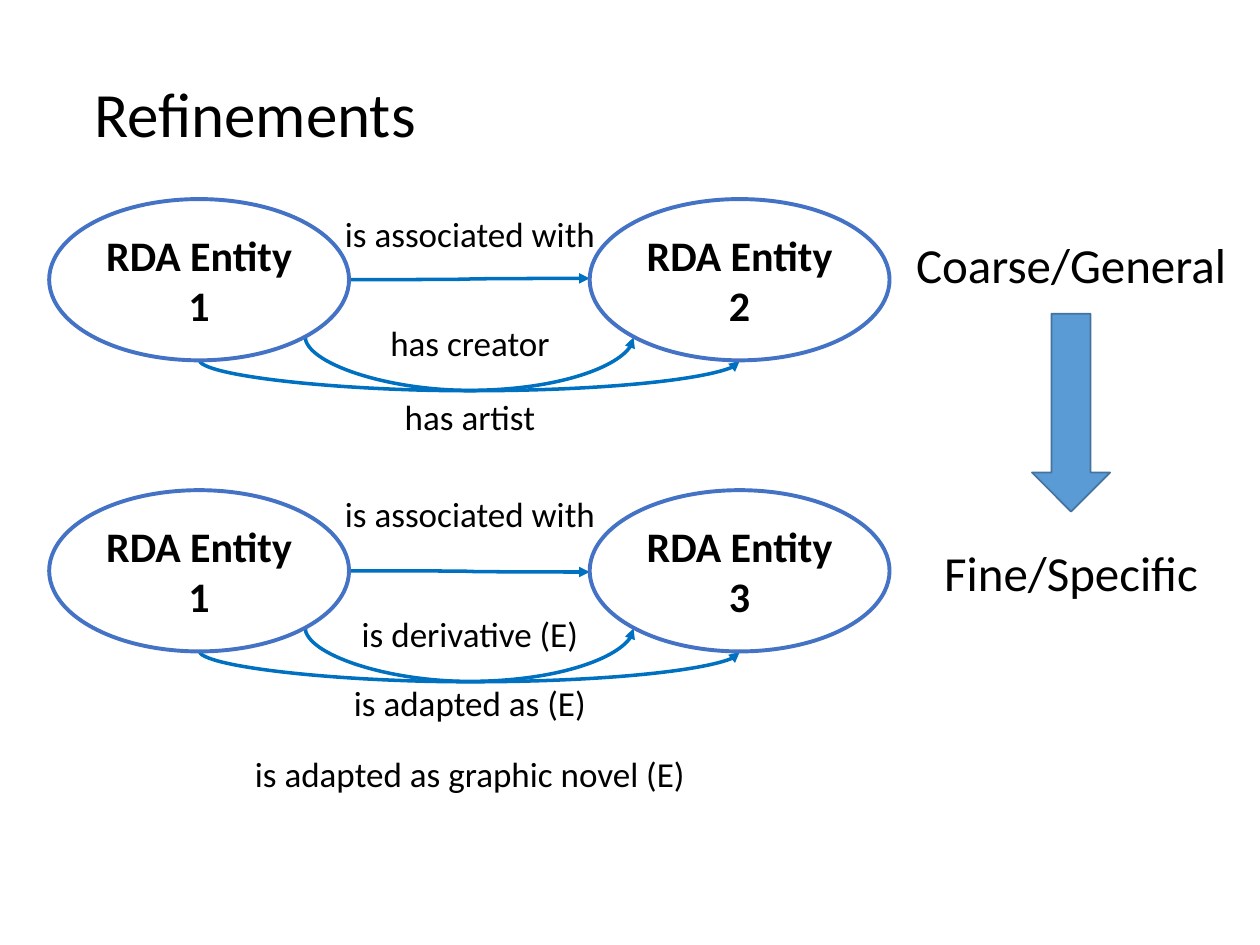
from dataclasses import dataclass

from lxml import etree
from pptx import Presentation
from pptx.dml.color import RGBColor
from pptx.enum import shapes, text
from pptx.oxml.ns import qn
from pptx.util import Inches, Pt

COLORS = {"text": "000000", "link": "0070C0", "entity": "4472C4",
          "arrow": "5B9BD5", "arrow_edge": "43739E"}
FONT = "Calibri"
ENTITY_W, ENTITY_H = 2.38, 1.28
LEFT_X, RIGHT_X = 0.39, 4.68
LABEL_X = 3.73   # shared centre of the relationship labels
SCALE_X = 8.5    # shared centre of the coarse-to-fine scale
DIP = 0.25       # how far the curves reach below the entities
SLIVER = 0.01    # height difference between the ends of a curve
DIAGONAL = 0.5 ** 0.5


@dataclass
class Label:
    caption: str
    top: float
    width: float


@dataclass
class Relation:
    top: float
    names: tuple[str, str]
    slope: float
    labels: list[Label]


RELATIONS = [
    Relation(1.58, ("RDA Entity\n1", "RDA Entity\n2"), -0.01, [
        Label("is associated with", 1.64, 2.21),
        Label("has creator", 2.5, 1.48),
        Label("has artist", 3.09, 1.25)]),
    Relation(3.89, ("RDA Entity\n1", "RDA Entity\n3"), 0.01, [
        Label("is associated with", 3.86, 2.21),
        Label("is derivative (E)", 4.81, 1.94),
        Label("is adapted as (E)", 5.36, 2.06),
        Label("is adapted as graphic novel (E)", 5.92, 3.65)]),
]


def rgb(name: str) -> RGBColor:
    return RGBColor.from_string(COLORS[name])


def write(sp, content: str, *, size: float, bold: bool = False,
          align=text.PP_ALIGN.CENTER, anchor=text.MSO_ANCHOR.TOP) -> None:
    tf = sp.text_frame
    tf.word_wrap = False
    tf.vertical_anchor = anchor
    tf.text = content
    for p in tf.paragraphs:
        p.alignment = align
        for r in p.runs:
            r.font.name, r.font.size, r.font.bold = FONT, Pt(size), bold
            r.font.color.rgb = rgb("text")


def add_label(s, label: Label, center: float, height: float, size: float,
              align=text.PP_ALIGN.CENTER) -> None:
    sp = s.shapes.add_textbox(Inches(center - label.width / 2), Inches(label.top),
                              Inches(label.width), Inches(height))
    write(sp, label.caption, size=size, align=align)


def add_entity(s, name: str, left: float, top: float) -> None:
    sp = s.shapes.add_shape(shapes.MSO_SHAPE.OVAL, Inches(left), Inches(top),
                            Inches(ENTITY_W), Inches(ENTITY_H))
    sp.shadow.inherit = False
    sp.fill.background()
    sp.line.color.rgb = rgb("entity")
    sp.line.width = Pt(2.25)
    write(sp, name, size=24, bold=True, anchor=text.MSO_ANCHOR.MIDDLE)


def add_link(s, x1: float, y1: float, x2: float, y2: float):
    cn = s.shapes.add_connector(shapes.MSO_CONNECTOR.CURVE, Inches(x1), Inches(y1),
                                Inches(x2), Inches(y2))
    cn.line.color.rgb = rgb("link")
    cn.line.width = Pt(2)
    etree.SubElement(cn.line._get_or_add_ln(), qn("a:tailEnd"), type="triangle")
    etree.SubElement(cn._element.spPr, qn("a:effectLst"))
    return cn


def add_hanging_link(s, x1: float, x2: float, y: float, depth: float) -> None:
    """Curve that sags by depth: an upright connector turned a quarter to the left."""
    mid, span = (x1 + x2) / 2, x2 - x1
    cn = add_link(s, mid - SLIVER / 2, y - span / 2, mid + SLIVER / 2, y + span / 2)
    xfrm = cn._element.spPr.find(qn("a:xfrm"))
    xfrm.set("rot", str(270 * 60000))
    xfrm.set("flipH", "1")
    guides = cn._element.spPr.find(qn("a:prstGeom")).get_or_add_avLst()
    etree.SubElement(guides, qn("a:gd"), name="adj1",
                     fmla=f"val {round(depth / SLIVER * 100000)}")


def add_relation(s, rel: Relation) -> None:
    mid_y, bottom = rel.top + ENTITY_H / 2, rel.top + ENTITY_H
    left_mid, right_mid = LEFT_X + ENTITY_W / 2, RIGHT_X + ENTITY_W / 2
    corner_x, corner_y = ENTITY_W / 2 * DIAGONAL, mid_y + ENTITY_H / 2 * DIAGONAL
    add_link(s, LEFT_X + ENTITY_W, mid_y, RIGHT_X, mid_y + rel.slope)
    add_hanging_link(s, left_mid + corner_x, right_mid - corner_x, corner_y,
                     bottom + DIP - corner_y)
    add_hanging_link(s, left_mid, right_mid, bottom, DIP)
    for label in rel.labels:
        add_label(s, label, LABEL_X, 0.44, 20)
    for name, left in zip(rel.names, (LEFT_X, RIGHT_X)):
        add_entity(s, name, left, rel.top)


def add_scale(s) -> None:
    add_label(s, Label("Coarse/General", 1.81, 2.69), SCALE_X, 0.57, 28)
    add_label(s, Label("Fine/Specific", 4.26, 2.24), SCALE_X, 0.57, 28)
    sp = s.shapes.add_shape(shapes.MSO_SHAPE.DOWN_ARROW, Inches(SCALE_X - 0.31),
                            Inches(2.49), Inches(0.62), Inches(1.57))
    sp.shadow.inherit = False
    sp.fill.solid()
    sp.fill.fore_color.rgb = rgb("arrow")
    sp.line.color.rgb = rgb("arrow_edge")
    sp.line.width = Pt(1)


def main() -> None:
    prs = Presentation()
    prs.slide_width, prs.slide_height = Inches(10), Inches(7.5)
    s = prs.slides.add_slide(prs.slide_layouts[6])
    add_label(s, Label("Refinements", 0.54, 2.78), 2.04, 0.71, 36,
              text.PP_ALIGN.LEFT)
    for rel in RELATIONS:
        add_relation(s, rel)
    add_scale(s)
    prs.save("out.pptx")


if __name__ == "__main__":
    main()
